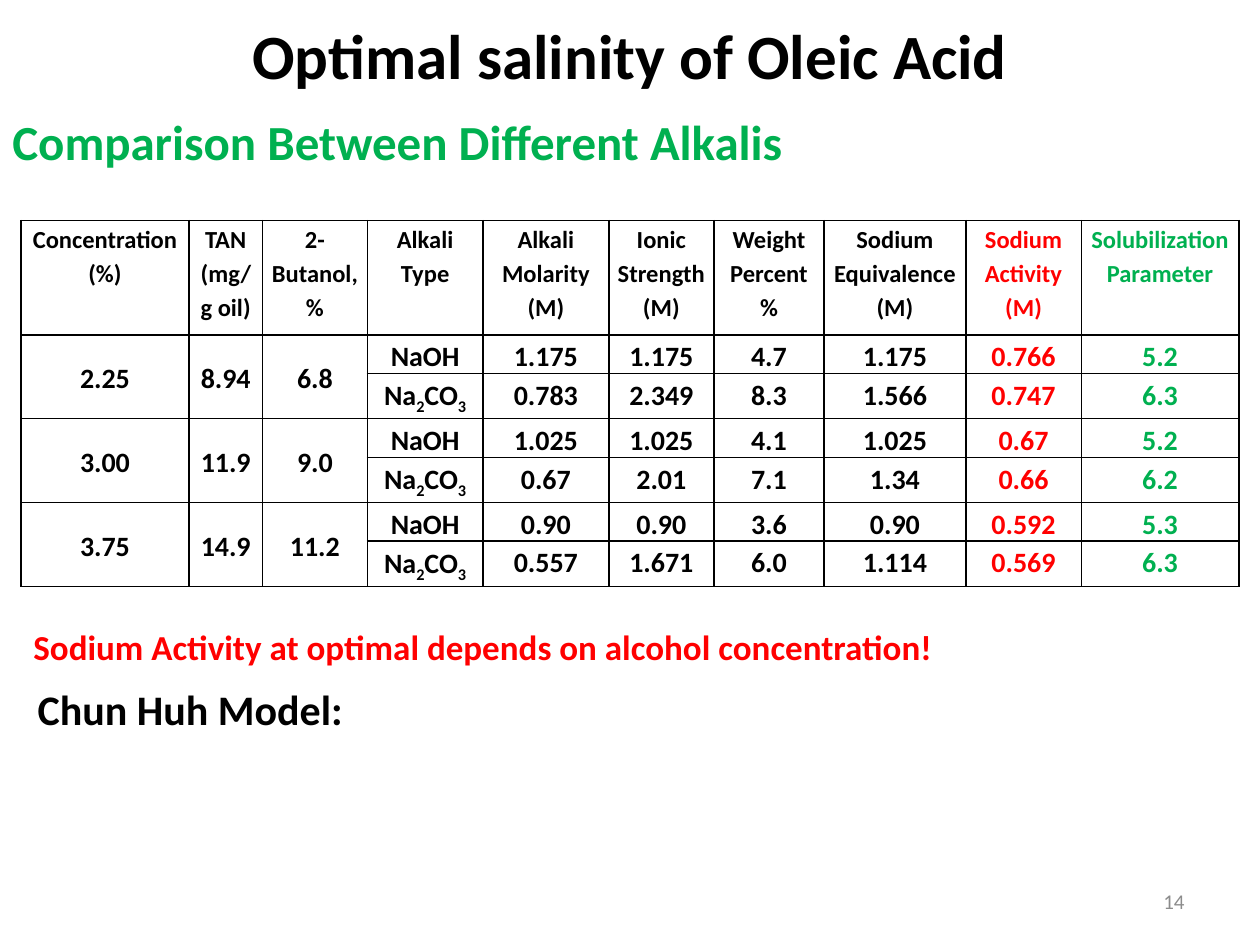
"""Builds the slide on the optimal salinity of oleic acid."""
from dataclasses import dataclass
from itertools import groupby

from lxml import etree
from pptx import Presentation
from pptx.dml.color import RGBColor
from pptx.enum.text import MSO_ANCHOR, PP_ALIGN
from pptx.oxml.ns import qn
from pptx.util import Inches, Pt

LEFT, CENTER, RIGHT, JUSTIFY = PP_ALIGN.LEFT, PP_ALIGN.CENTER, PP_ALIGN.RIGHT, PP_ALIGN.JUSTIFY
TOP, MIDDLE = MSO_ANCHOR.TOP, MSO_ANCHOR.MIDDLE


@dataclass(frozen=True)
class Theme:
    font: str = "Calibri"
    ink: str = "000000"
    activity: str = "FF0000"
    accent: str = "00B050"
    muted: str = "8C8C8C"
    title: int = 36
    subtitle: int = 28
    model: int = 24
    finding: int = 20
    value: int = 16
    heading: int = 14
    number: int = 12
    border: int = 1


THEME = Theme()
GRID = 12
COLUMN_WIDTHS = [16, 7, 10, 11, 12, 10, 10.5, 13.5, 11, 15]
ROW_HEIGHTS = [10.9] + [3.4, 4.3] * 3
COLUMN_COLORS = [THEME.ink] * 8 + [THEME.activity, THEME.accent]
HEADINGS = [
    "Concentration\n(%)", "TAN\n(mg/g oil)", "2-Butanol,\n%", "Alkali Type", "Alkali Molarity\n(M)",
    "Ionic Strength\n(M)", "Weight Percent\n%", "Sodium Equivalence\n(M)", "Sodium Activity\n(M)",
    "Solubilization Parameter",
]
MIXTURES = [
    (["2.25", "8.94", "6.8"],
     ["NaOH", "1.175", "1.175", "4.7", "1.175", "0.766", "5.2"],
     ["Na2CO3", "0.783", "2.349", "8.3", "1.566", "0.747", "6.3"]),
    (["3.00", "11.9", "9.0"],
     ["NaOH", "1.025", "1.025", "4.1", "1.025", "0.67", "5.2"],
     ["Na2CO3", "0.67", "2.01", "7.1", "1.34", "0.66", "6.2"]),
    (["3.75", "14.9", "11.2"],
     ["NaOH", "0.90", "0.90", "3.6", "0.90", "0.592", "5.3"],
     ["Na2CO3", "0.557", "1.671", "6.0", "1.114", "0.569", "6.3"]),
]


def units(count):
    """Turn a count of grid units into a length."""
    return Inches(count / GRID)


def write_text(frame, text, *, size, color=THEME.ink, bold=True, align=LEFT, spacing=None):
    """Write one paragraph per line, lowering the digits of a chemical formula."""
    for index, line in enumerate(text.split("\n")):
        paragraph = frame.add_paragraph() if index else frame.paragraphs[0]
        paragraph.alignment = align
        paragraph.line_spacing = spacing
        is_formula = line.isalnum() and line[0].isalpha()
        for lowered, letters in groupby(line, lambda letter: is_formula and letter.isdigit()):
            run = paragraph.add_run()
            run.text = "".join(letters)
            run.font.name, run.font.size, run.font.bold = THEME.font, Pt(size), bold
            run.font.color.rgb = RGBColor.from_string(color)
            if lowered:
                run.font._element.set("baseline", "-25000")


class SlideBuilder:
    """Holds the theme and the current slide."""

    def __init__(self, presentation, theme):
        """Add a blank slide."""
        self.theme = theme
        self.slide = presentation.slides.add_slide(presentation.slide_layouts[6])

    def label(self, text, left, top, width, height, *, anchor=TOP, **text_format):
        """Place a text box on the grid."""
        box = self.slide.shapes.add_textbox(*map(units, (left, top, width, height)))
        box.text_frame.word_wrap = True
        box.text_frame.vertical_anchor = anchor
        write_text(box.text_frame, text, **text_format)

    def cell(self, cell, text, color, size, anchor):
        """Fill in one table cell."""
        cell.margin_left = cell.margin_right = Inches(0.07)
        cell.margin_top = cell.margin_bottom = 0
        cell.vertical_anchor = anchor
        write_text(cell.text_frame, text, size=size, color=color, align=CENTER, spacing=1.15)

    def border(self, cell):
        """Clear a cell's fill and rule its four sides."""
        cell.fill.background()
        properties = cell._tc.get_or_add_tcPr()
        for position, side in enumerate(("a:lnL", "a:lnR", "a:lnT", "a:lnB")):
            line = etree.Element(qn(side), w=str(Pt(self.theme.border)))
            fill = etree.SubElement(line, qn("a:solidFill"))
            etree.SubElement(fill, qn("a:srgbClr"), val=self.theme.ink)
            properties.insert(position, line)

    def comparison_table(self, left, top):
        """Draw the table, joining the cells that both alkalis share."""
        size = sum(COLUMN_WIDTHS), sum(ROW_HEIGHTS)
        table = self.slide.shapes.add_table(
            len(ROW_HEIGHTS), len(COLUMN_WIDTHS), *map(units, (left, top, *size))).table
        table.first_row = table.horz_banding = False
        for column, width in zip(table.columns, COLUMN_WIDTHS):
            column.width = units(width)
        for row, height in zip(table.rows, ROW_HEIGHTS):
            row.height = units(height)
        for cell in table.iter_cells():
            self.border(cell)
        for column, heading in enumerate(HEADINGS):
            self.cell(table.cell(0, column), heading, COLUMN_COLORS[column], self.theme.heading, TOP)
        for group, (shared, *alkalis) in enumerate(MIXTURES):
            first = 1 + 2 * group
            for column, value in enumerate(shared):
                table.cell(first, column).merge(table.cell(first + 1, column))
                self.cell(table.cell(first, column), value, COLUMN_COLORS[column], self.theme.value, MIDDLE)
            for row, values in enumerate(alkalis, first):
                for column, value in enumerate(values, len(shared)):
                    self.cell(table.cell(row, column), value, COLUMN_COLORS[column], self.theme.value, TOP)


def main():
    """Build and save the slide."""
    presentation = Presentation()
    presentation.slide_width, presentation.slide_height = Inches(10), Inches(7.5)
    builder = SlideBuilder(presentation, THEME)
    builder.label("Optimal salinity of Oleic Acid", 0, 1, 120, 10, size=THEME.title, align=CENTER)
    builder.comparison_table(2, 21)
    builder.label("Comparison Between Different Alkalis", 0, 10, 120, 7,
                  size=THEME.subtitle, color=THEME.accent, align=JUSTIFY)
    builder.label("14", 86, 83.4, 28, 4.8, size=THEME.number, color=THEME.muted,
                  bold=False, align=RIGHT, anchor=MIDDLE)
    builder.label("Sodium Activity at optimal depends on alcohol concentration!", 2, 59, 100, 5.3,
                  size=THEME.finding, color=THEME.activity)
    builder.label("Chun Huh Model:", 2.4, 64.5, 72, 6, size=THEME.model)
    presentation.save("out.pptx")


if __name__ == "__main__":
    main()
